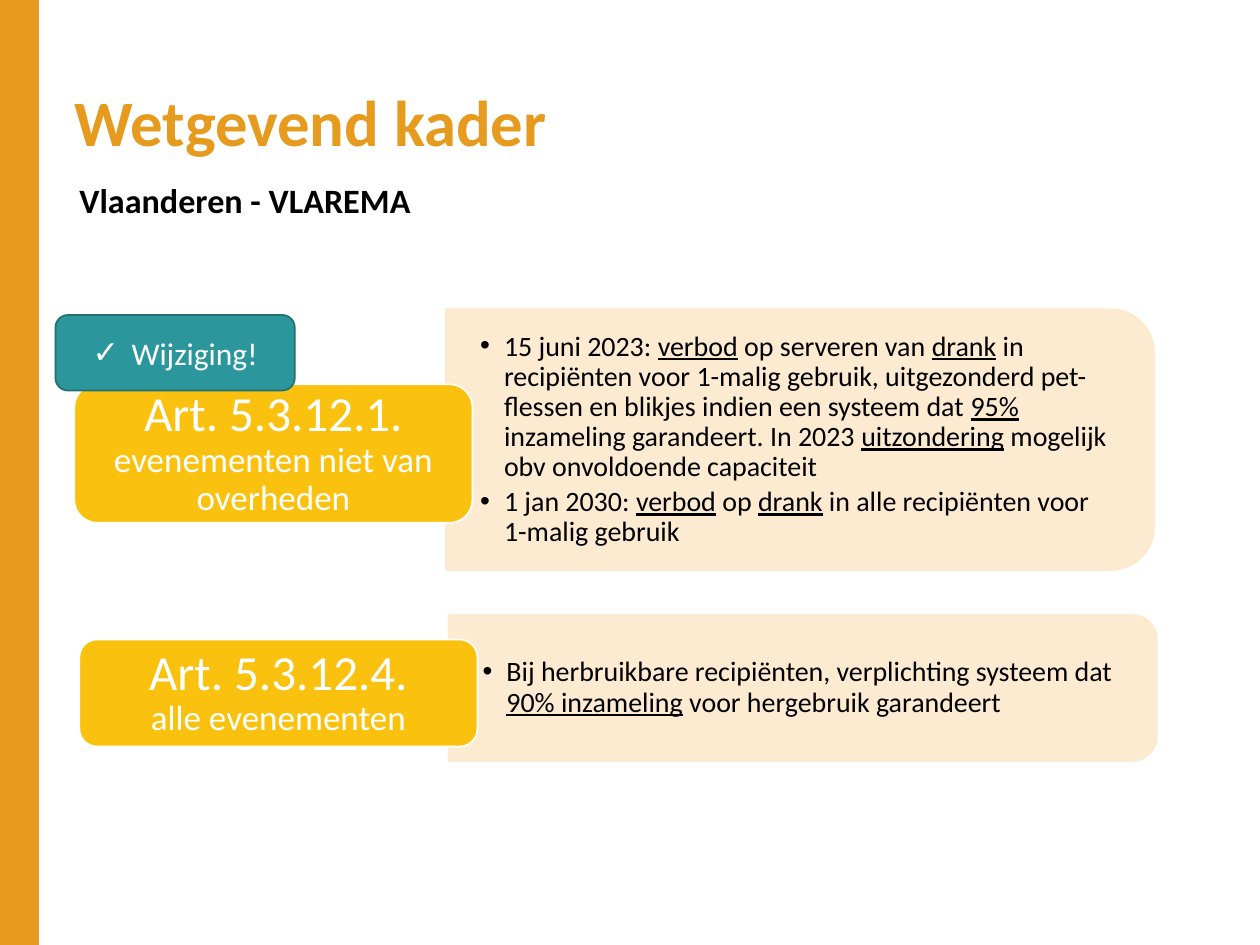
from lxml.etree import SubElement
from pptx import Presentation
from pptx.dml.color import RGBColor
from pptx.enum.shapes import MSO_SHAPE as Shape
from pptx.enum.text import MSO_ANCHOR as Anchor, PP_ALIGN as Align
from pptx.oxml.ns import qn
from pptx.util import Inches, Pt

WIDTH, HEIGHT = 10, 7.5
COLORS = {
    "orange": "E69B1F", "cream": "FDE9CC", "yellow": "FAC20E", "teal": "2B979D",
    "dark_teal": "207074", "white": "FFFFFF", "black": "000000",
}
TITLE = "Wetgevend kader"
SUBTITLE = "Vlaanderen - VLAREMA"
BADGE = "Wijziging!"
ARTICLES = [
    {
        "heading": "Art. 5.3.12.1.",
        "scope": "evenementen niet van overheden",
        "rules": [
            "15 juni 2023: _verbod_ op serveren van _drank_ in recipiënten voor 1-malig "
            "gebruik, uitgezonderd pet-flessen en blikjes indien een systeem dat _95%_ "
            "inzameling garandeert. In 2023 _uitzondering_ mogelijk obv onvoldoende capaciteit",
            "1 jan 2030: _verbod_ op _drank_ in alle recipiënten voor 1-malig gebruik",
        ],
        "left": 0.59, "middle": 3.49, "panel_height": 2.07,
        "label_middle": 3.6, "label_height": 1.1, "text_width": 5.52,
    },
    {
        "heading": "Art. 5.3.12.4.",
        "scope": "alle evenementen",
        "rules": [
            "Bij herbruikbare recipiënten, verplichting systeem dat _90% inzameling_ "
            "voor hergebruik garandeert",
        ],
        "left": 0.63, "middle": 5.46, "panel_height": 1.16,
        "label_middle": 5.5, "label_height": 0.85, "text_width": 5.57,
    },
]
LABEL_WIDTH, PANEL_WIDTH = 3.16, 5.62
PANEL_LEFT = {0.59: 3.54, 0.63: 3.56}


def color(name):
    return RGBColor.from_string(COLORS[name])


def inches(*lengths):
    return [Inches(length) for length in lengths]


def add_box(slide, kind, at, fill, line=None):
    box = slide.shapes.add_shape(kind, *inches(*at))
    box.shadow.inherit = False
    box.fill.solid()
    box.fill.fore_color.rgb = color(fill)
    if line:
        box.line.color.rgb = color(line)
        box.line.width = Pt(1)
    else:
        box.line.fill.background()
    return box


def set_frame(shape, across=0, down=0, anchor=Anchor.MIDDLE):
    frame = shape.text_frame
    frame.word_wrap = True
    frame.vertical_anchor = anchor
    frame.margin_left = frame.margin_right = Inches(across)
    frame.margin_top = frame.margin_bottom = Inches(down)
    return frame


def add_span(para, text, size, ink, bold=False, underline=False):
    span = para.add_run()
    span.text = text
    font = span.font
    font.name, font.size, font.bold, font.underline = "Calibri", Pt(size), bold, underline
    font.color.rgb = color(ink)


def add_bullet(para, mark, indent):
    properties = para._p.get_or_add_pPr()
    properties.set("marL", str(Inches(indent)))
    properties.set("indent", str(-Inches(indent)))
    SubElement(properties, qn("a:buFont")).set("typeface", "Arial")
    SubElement(properties, qn("a:buChar")).set("char", mark)


def add_panel(slide, article):
    left, middle, height = PANEL_LEFT[article["left"]], article["middle"], article["panel_height"]
    at = (left + (PANEL_WIDTH - height) / 2, middle - PANEL_WIDTH / 2, height, PANEL_WIDTH)
    panel = add_box(slide, Shape.ROUND_2_SAME_RECTANGLE, at, "cream", "cream")
    panel.rotation = 90
    for paint in panel._element.spPr.iter(qn("a:srgbClr")):
        SubElement(paint, qn("a:alpha")).set("val", "90000")

    text_height = height * 0.9
    box = slide.shapes.add_textbox(
        *inches(left, middle - text_height / 2, article["text_width"], text_height))
    frame = set_frame(box, 0.27, 0.14)
    for index, rule in enumerate(article["rules"]):
        para = frame.add_paragraph() if index else frame.paragraphs[0]
        para.line_spacing = 0.9
        para.space_after = Pt(2.4)
        add_bullet(para, "•", 0.19)
        for position, text in enumerate(rule.split("_")):
            add_span(para, text, 16, "black", underline=position % 2 == 1)


def add_label(slide, article):
    height = article["label_height"]
    at = (article["left"], article["label_middle"] - height / 2, LABEL_WIDTH, height)
    label = add_box(slide, Shape.ROUNDED_RECTANGLE, at, "yellow", "white")
    para = set_frame(label, 0.12, 0.06).paragraphs[0]
    para.alignment = Align.CENTER
    para.line_spacing = 0.9
    add_span(para, article["heading"], 28, "white")
    para.add_line_break()
    add_span(para, article["scope"], 20, "white")


def add_headings(slide):
    title = slide.shapes.title
    title.left, title.top, title.width, title.height = inches(0.59, 0.53, 4.1, 0.93)
    subtitle = slide.shapes.add_textbox(*inches(0.63, 1.46, 3.23, 0.42))
    for box, text, size, ink, anchor in (
        (title, TITLE, 37, "orange", Anchor.MIDDLE),
        (subtitle, SUBTITLE, 19.5, "black", Anchor.TOP),
    ):
        para = set_frame(box, anchor=anchor).paragraphs[0]
        para.alignment = Align.LEFT
        para.line_spacing = 0.9
        add_span(para, text, size, ink, bold=True)


def add_badge(slide):
    badge = add_box(slide, Shape.ROUNDED_RECTANGLE, (0.44, 2.5, 1.9, 0.6), "teal", "dark_teal")
    para = set_frame(badge, 0.1, 0.05).paragraphs[0]
    para.alignment = Align.CENTER
    add_bullet(para, "✓", 0.31)
    add_span(para, BADGE, 18, "white")


def main():
    deck = Presentation()
    deck.slide_width, deck.slide_height = inches(WIDTH, HEIGHT)
    slide = deck.slides.add_slide(deck.slide_layouts[5])
    add_box(slide, Shape.RECTANGLE, (0, 0, 0.31, HEIGHT), "orange")
    for article in ARTICLES:
        add_panel(slide, article)
        add_label(slide, article)
    add_headings(slide)
    add_badge(slide)
    deck.save("out.pptx")


if __name__ == "__main__":
    main()
